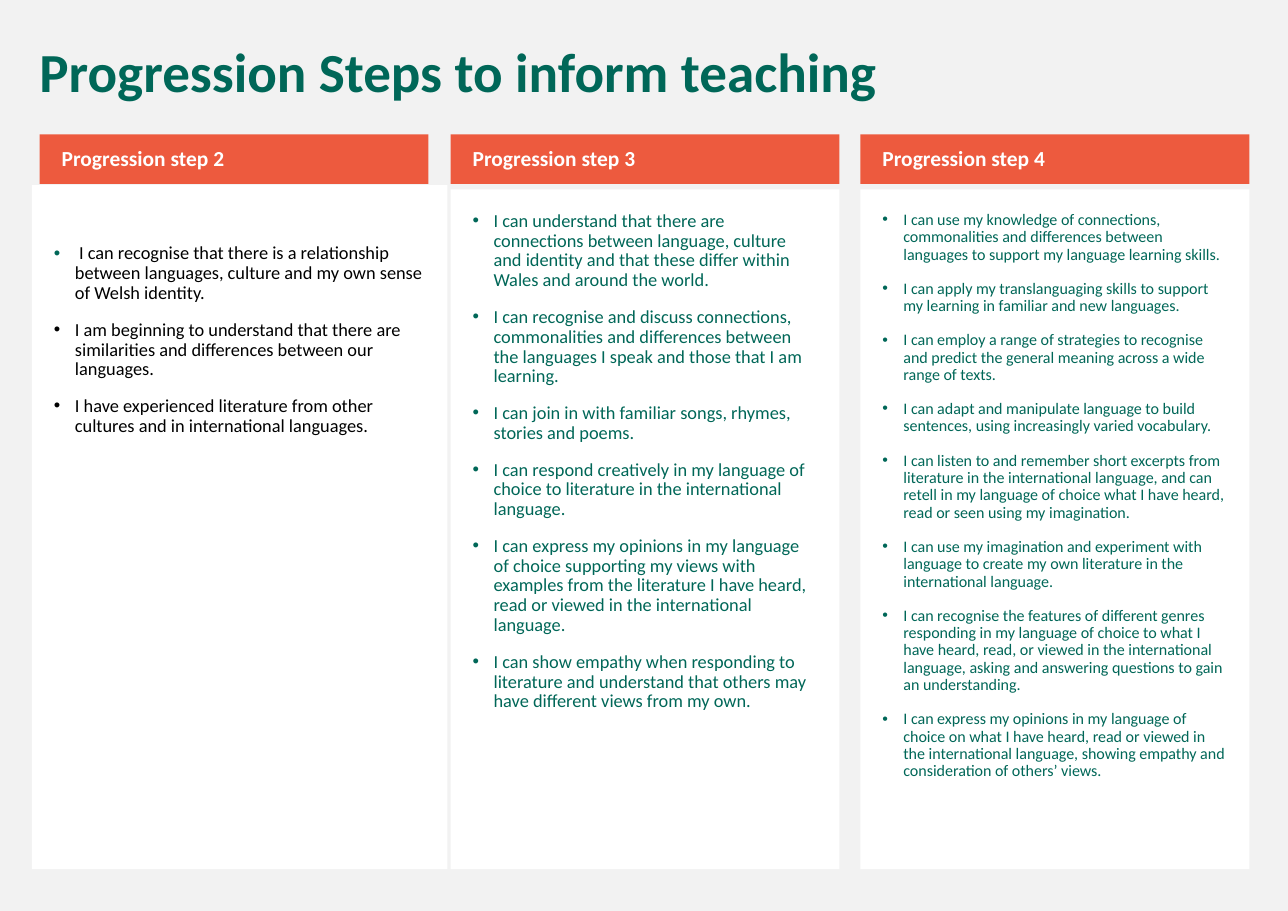
from lxml.etree import SubElement
from pptx import Presentation
from pptx.dml.color import RGBColor
from pptx.enum.shapes import MSO_SHAPE
from pptx.enum.text import MSO_ANCHOR, PP_ALIGN
from pptx.oxml.ns import qn
from pptx.util import Pt

COLORS = {"page": "F2F2F2", "panel": "FFFFFF", "header": "ED5A3E",
          "green": "006758", "black": "000000", "white": "FFFFFF"}
FONT = "Calibri"
TITLE = "Progression Steps to inform teaching"

# Each step: header, header left, panel (left, top, width), top inset, size, colour, statements
STEPS = [
    ("Progression step 2", 25.92, (20.88, 120.96, 271.44), 38.6, 12, "black", [
        " I can recognise that there is a relationship between languages, culture and my own sense of Welsh identity.",
        "I am beginning to understand that there are similarities and differences between our languages.",
        "I have experienced literature from other cultures and in international languages.",
    ]),
    ("Progression step 3", 294.48, (294.48, 123.84, 254.16), 14.4, 12, "green", [
        "I can understand that there are connections between language, culture and identity and that these differ within Wales and around the world.",
        "I can recognise and discuss connections, commonalities and differences between the languages I speak and those that I am learning.",
        "I can join in with familiar songs, rhymes, stories and poems.",
        "I can respond creatively in my language of choice to literature in the international language.",
        "I can express my opinions in my language of choice supporting my views with examples from the literature I have heard, read or viewed in the international language.",
        "I can show empathy when responding to literature and understand that others may have different views from my own.",
    ]),
    ("Progression step 4", 562.32, (562.32, 123.84, 254.16), 14.4, 10.5, "green", [
        "I can use my knowledge of connections, commonalities and differences between languages to support my language learning skills.",
        "I can apply my translanguaging skills to support my learning in familiar and new languages.",
        "I can employ a range of strategies to recognise and predict the general meaning across a wide range of texts.",
        "I can adapt and manipulate language to build sentences, using increasingly varied vocabulary.",
        "I can listen to and remember short excerpts from literature in the international language, and can retell in my language of choice what I have heard, read or seen using my imagination.",
        "I can use my imagination and experiment with language to create my own literature in the international language.",
        "I can recognise the features of different genres responding in my language of choice to what I have heard, read, or viewed in the international language, asking and answering questions to gain an understanding.",
        "I can express my opinions in my language of choice on what I have heard, read or viewed in the international language, showing empathy and consideration of others’ views.",
    ]),
]
HEADER_TOP, HEADER_W, HEADER_H = 87.84, 254.16, 32.4
PANEL_BOTTOM = 568.08
INDENT = 13.68


def rgb(name):
    return RGBColor.from_string(COLORS[name])


def add_bullet(p, color):
    pPr = p._p.get_or_add_pPr()
    pPr.set("marL", str(Pt(INDENT)))
    pPr.set("indent", str(-Pt(INDENT)))
    SubElement(SubElement(pPr, qn("a:buClr")), qn("a:srgbClr"), val=COLORS[color])
    SubElement(pPr, qn("a:buFont"), typeface="Arial")
    SubElement(pPr, qn("a:buChar"), char="•")


def write(sp, paragraphs, size, color, bold=False, bullets=(),
          insets=(7.2, 3.6, 7.2, 3.6), anchor=MSO_ANCHOR.TOP):
    """Fill a shape with paragraphs; bullets lists one colour per paragraph."""
    tf = sp.text_frame
    tf.word_wrap = True
    tf.vertical_anchor = anchor
    tf.margin_left, tf.margin_top, tf.margin_right, tf.margin_bottom = map(Pt, insets)
    for i, text in enumerate(paragraphs):
        p = tf.add_paragraph() if i else tf.paragraphs[0]
        p.alignment = PP_ALIGN.LEFT
        p.line_spacing = 0.9
        p.space_before = Pt(11)
        if bullets:
            add_bullet(p, bullets[i])
        r = p.add_run()
        r.text = text
        r.font.name = FONT
        r.font.size = Pt(size)
        r.font.bold = bold
        r.font.color.rgb = rgb(color)


def add_rect(s, left, top, width, height, fill):
    sp = s.shapes.add_shape(MSO_SHAPE.RECTANGLE, Pt(left), Pt(top), Pt(width), Pt(height))
    sp.shadow.inherit = False
    sp.fill.solid()
    sp.fill.fore_color.rgb = rgb(fill)
    sp.line.fill.background()
    return sp


def main():
    prs = Presentation()
    prs.slide_width, prs.slide_height = Pt(841.68), Pt(595.44)
    s = prs.slides.add_slide(prs.slide_layouts[6])
    s.background.fill.solid()
    s.background.fill.fore_color.rgb = rgb("page")

    for header, header_left, (left, top, width), inset, size, color, statements in STEPS:
        panel = add_rect(s, left, top, width, PANEL_BOTTOM - top, "panel")
        bullets = ["green"] + [color] * (len(statements) - 1)
        write(panel, statements, size, color, bullets=bullets,
              insets=(14.4, inset, 14.4, 14.4))
        bar = add_rect(s, header_left, HEADER_TOP, HEADER_W, HEADER_H, "header")
        write(bar, [header], 14, "white", bold=True,
              insets=(14.4, 3.6, 7.2, 3.6), anchor=MSO_ANCHOR.MIDDLE)

    title = s.shapes.add_textbox(Pt(18.72), Pt(25.92), Pt(797.76), Pt(46.8))
    write(title, [TITLE], 36, "green", bold=True)
    prs.save("out.pptx")


if __name__ == "__main__":
    main()
